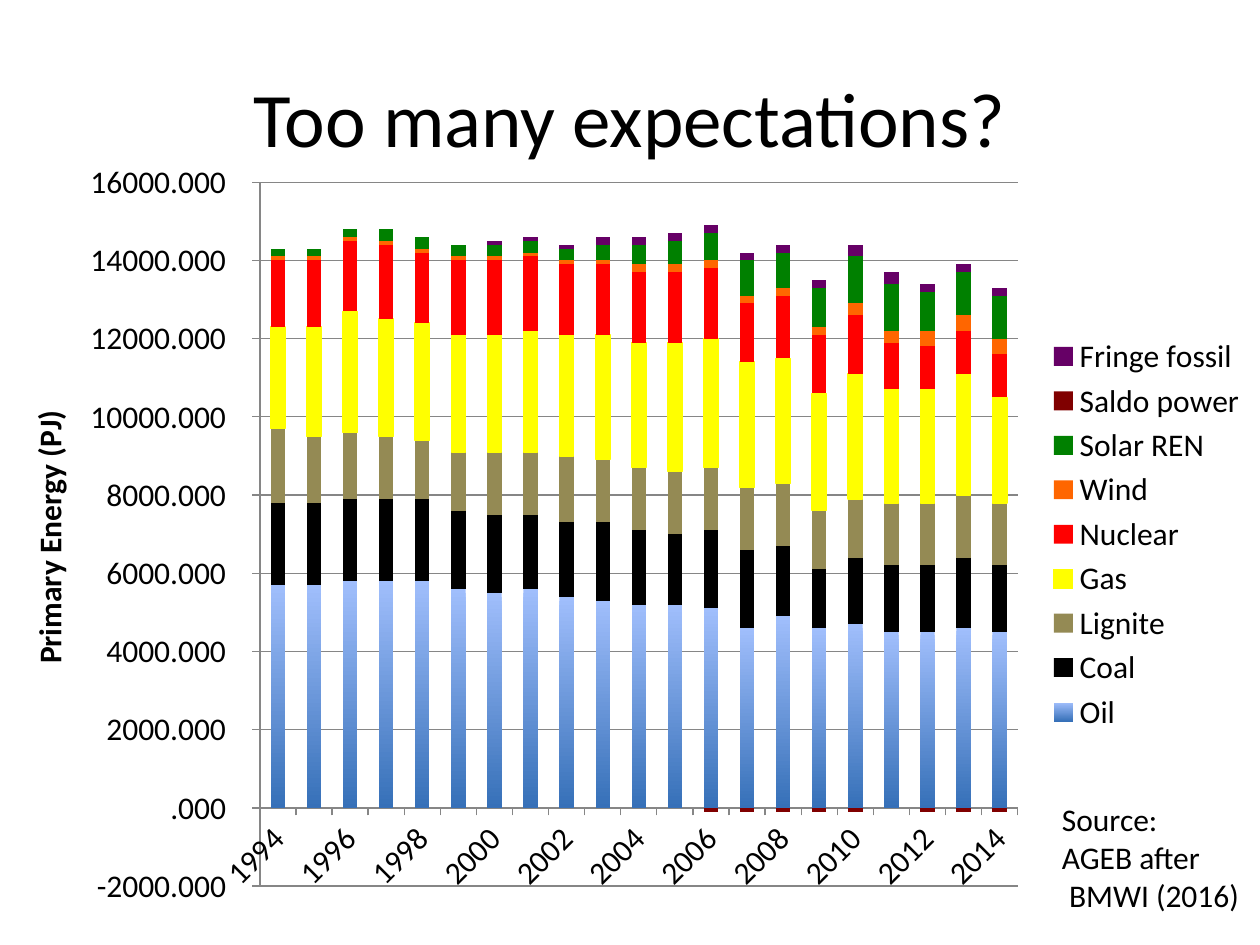
from lxml import etree
from pptx import Presentation, util as u
from pptx.chart import data
from pptx.dml import color
from pptx.enum import chart as kinds, text
from pptx.oxml import ns, parse_xml

WIDTH, HEIGHT = 10, 7.5
FONT = {"name": "Calibri", "size": u.Pt(18)}
COLORS = {
    "text": "000000", "grid": "868686", "light": "A0BEFC", "dark": "3670B8",
    "Oil": "4F81BD", "Coal": "000000", "Lignite": "948A54", "Gas": "FFFF00",
    "Nuclear": "FF0000", "Wind": "FF6600", "Solar REN": "008000",
    "Saldo power": "800000", "Fringe fossil": "660066",
}
YEARS = [float(year) for year in range(1994, 2015)]
ENERGY = {
    "Oil": [5700, 5700, 5800, 5800, 5800, 5600, 5500, 5600, 5400, 5300, 5200,
            5200, 5100, 4600, 4900, 4600, 4700, 4500, 4500, 4600, 4500],
    "Coal": [2100, 2100, 2100, 2100, 2100, 2000, 2000, 1900, 1900, 2000, 1900,
             1800, 2000, 2000, 1800, 1500, 1700, 1700, 1700, 1800, 1700],
    "Lignite": [1900, 1700, 1700, 1600, 1500, 1500, 1600, 1600, 1700, 1600, 1600,
                1600, 1600, 1600, 1600, 1500, 1500, 1600, 1600, 1600, 1600],
    "Gas": [2600, 2800, 3100, 3000, 3000, 3000, 3000, 3100, 3100, 3200, 3200,
            3300, 3300, 3200, 3200, 3000, 3200, 2900, 2900, 3100, 2700],
    "Nuclear": [1700, 1700, 1800, 1900, 1800, 1900, 1900, 1900, 1800, 1800, 1800,
                1800, 1800, 1500, 1600, 1500, 1500, 1200, 1100, 1100, 1100],
    "Wind": [100] * 10 + [200] * 6 + [300] * 2 + [400] * 3,
    "Solar REN": [200, 200, 200, 300, 300, 300, 300, 300, 300, 400, 500,
                  600, 700, 900, 900, 1000, 1200, 1200, 1000, 1100, 1100],
    "Saldo power": [0] * 12 + [-100] * 5 + [0] + [-100] * 3,
    "Fringe fossil": [0] * 6 + [100] * 3 + [200] * 7 + [300] * 2 + [200] * 3,
}


def rgb(name):
    return color.RGBColor.from_string(COLORS[name])


def share(left, top, width, height):
    """Turn percentages of the slide's size into lengths."""
    return [u.Inches(part * side / 100) for part, side in
            zip((left, top, width, height), (WIDTH, HEIGHT) * 2)]


def apply(target, values):
    for name, value in values.items():
        setattr(target, name, value)


def set_font(font, **values):
    apply(font, {**FONT, **values})
    font.color.rgb = rgb("text")


def set_title(page, words):
    title = page.shapes.title
    apply(title, dict(zip(("left", "top", "width", "height"), share(5, 4, 90, 16.67))))
    title.text_frame.text = words
    para = title.text_frame.paragraphs[0]
    para.alignment = text.PP_ALIGN.CENTER
    set_font(para.font, size=u.Pt(44))


def add_note(page, lines, place):
    frame = page.shapes.add_textbox(*share(*place)).text_frame
    apply(frame, {"word_wrap": True, "auto_size": text.MSO_AUTO_SIZE.SHAPE_TO_FIT_TEXT})
    frame.text = "\n".join(lines)
    for para in frame.paragraphs:
        set_font(para.font)


def style_series(series):
    series.invert_if_negative = False
    fill = series.format.fill
    if series.name == "Oil":
        fill.gradient()
        fill.gradient_angle = 270
        for stop, name in zip(fill.gradient_stops, ("light", "dark")):
            stop.color.rgb = rgb(name)
    else:
        fill.solid()
        fill.fore_color.rgb = rgb(series.name)
    if series.name == "Gas":
        series.format.line.color.rgb = rgb("Gas")
        series.format.line.width = u.Pt(0.75)


def make_layout(target="", **percents):
    """Build a manual layout from percentages of the chart's size."""
    parts = f'<c:layoutTarget val="{target}"/>' if target else ""
    parts += "".join(f'<c:{name}Mode val="edge"/>' for name in "xy")
    parts += "".join(f'<c:{name} val="{value / 100:.4f}"/>'
                     for name, value in percents.items())
    return parse_xml(f'<c:layout {ns.nsdecls("c")}><c:manualLayout>{parts}'
                     '</c:manualLayout></c:layout>')


def remove_layout(element):
    for old in element.findall(ns.qn("c:layout")):
        element.remove(old)


def style_axes(chart):
    years, values = chart.category_axis, chart.value_axis
    for axis in (years, values):
        axis.major_tick_mark = kinds.XL_TICK_MARK.OUTSIDE
        axis.format.line.color.rgb = rgb("grid")
        set_font(axis.tick_labels.font)
    apply(values, {"minimum_scale": -2000, "maximum_scale": 16000, "major_unit": 2000,
                   "has_major_gridlines": True})
    values.major_gridlines.format.line.color.rgb = rgb("grid")
    apply(values.tick_labels, {"number_format": "#.##0\\ \\ \\ ",
                               "number_format_is_linked": False})
    frame = values.axis_title.text_frame
    frame.text = "Primary Energy (PJ)"
    set_font(frame.paragraphs[0].runs[0].font, bold=True)
    title = values.axis_title._element
    remove_layout(title)
    title.find(ns.qn("c:tx")).addnext(make_layout(x=2.3, y=33.3))
    element = years._element
    element.find(ns.qn("c:txPr")).find(ns.qn("a:bodyPr")).set("rot", "-2700000")
    skip = etree.Element(ns.qn("c:tickLblSkip"), val="2")
    element.find(ns.qn("c:noMultiLvlLbl")).addprevious(skip)


def add_energy_chart(page, place):
    table = data.CategoryChartData()
    table.categories = YEARS
    for name, values in ENERGY.items():
        table.add_series(name, values)
    chart = page.shapes.add_chart(
        kinds.XL_CHART_TYPE.COLUMN_STACKED, *share(*place), table).chart
    set_font(chart.font)
    apply(chart, {"has_title": False, "has_legend": True})
    apply(chart.legend, {"position": kinds.XL_LEGEND_POSITION.RIGHT,
                         "include_in_layout": False})
    set_font(chart.legend.font)
    plot = chart.plots[0]
    apply(plot, {"gap_width": 150, "overlap": 100, "vary_by_categories": False})
    for series in plot.series:
        style_series(series)
    style_axes(chart)
    plot_area = chart._chartSpace.chart.plotArea
    remove_layout(plot_area)
    plot_area.insert(0, make_layout("inner", x=21.1, y=4.5, w=59.8, h=91))


def main():
    deck = Presentation()
    apply(deck, {"slide_width": u.Inches(WIDTH), "slide_height": u.Inches(HEIGHT)})
    page = deck.slides.add_slide(deck.slide_layouts[5])
    set_title(page, "Too many expectations?")
    add_note(page, ["Source:", "AGEB after", " BMWI (2016)"], (83.3, 84, 16.7, 13.5))
    add_energy_chart(page, (-0.6, 15.6, 100.6, 81.87))
    deck.save("out.pptx")


if __name__ == "__main__":
    main()
